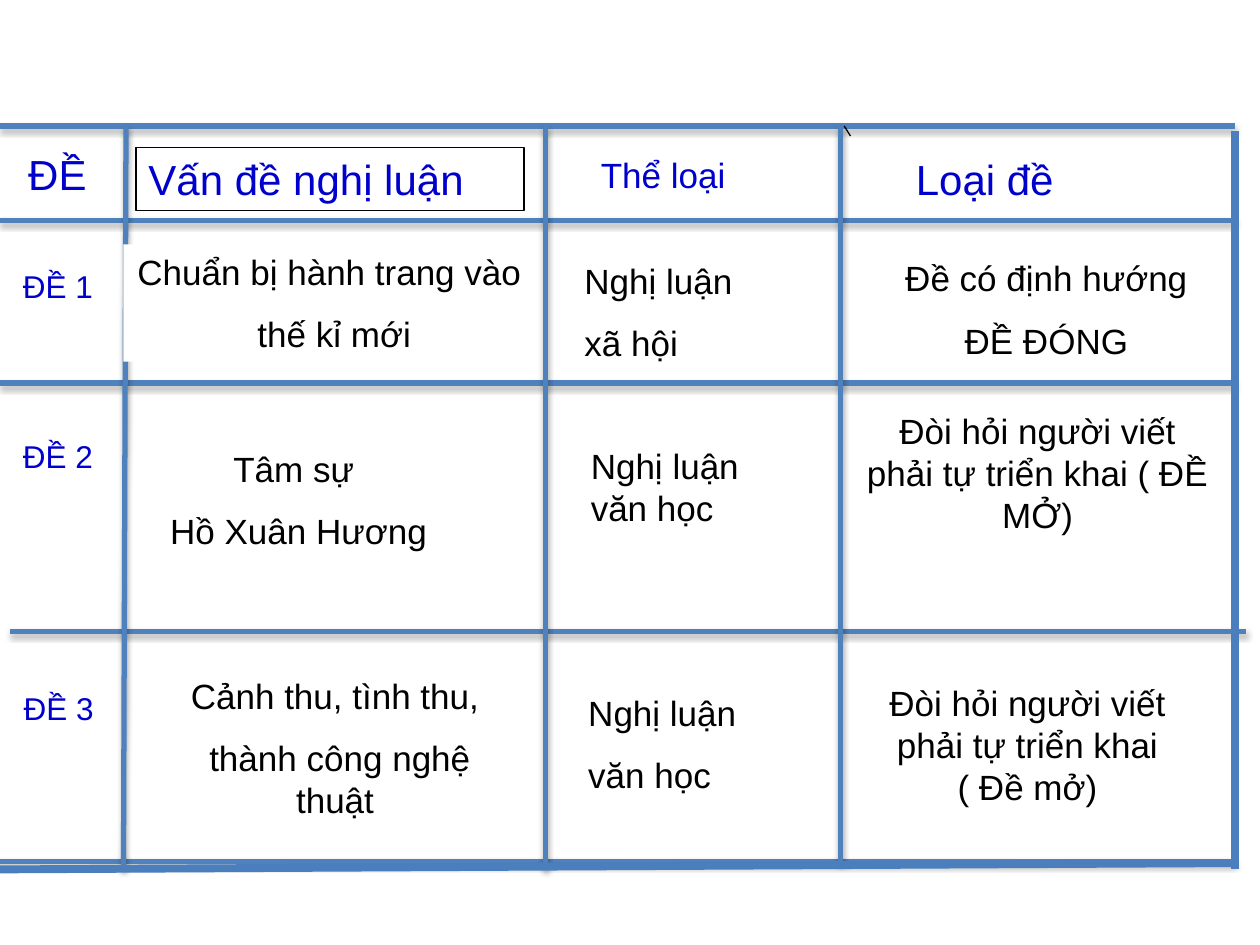
from lxml.etree import SubElement
from pptx import Presentation
from pptx.dml.color import RGBColor
from pptx.enum.shapes import MSO_CONNECTOR
from pptx.enum.text import MSO_ANCHOR, MSO_AUTO_SIZE, PP_ALIGN
from pptx.oxml.ns import qn
from pptx.util import Inches, Pt

WHITE = RGBColor(0xFF, 0xFF, 0xFF)
BLACK = RGBColor(0, 0, 0)
BLUE = RGBColor(0, 0, 0xCC)
GRID = RGBColor(0x4F, 0x81, 0xBD)
FRAME = RGBColor(0x4B, 0x7E, 0xBC)
LEFT, CENTER = PP_ALIGN.LEFT, PP_ALIGN.CENTER

GRID_LINES = [
    (0, 1, 9.8, 1),
    (0, 1.75, 9.8, 1.75),
    (0, 3.04, 9.8, 3.04),
    (0.08, 5.01, 9.89, 5.01),
    (-0.07, 6.84, 9.8, 6.84),
    (1, 1, 0.98, 6.9),
    (4.33, 1, 4.33, 6.9),
    (6.67, 1, 6.67, 6.85),
]
FRAME_LINES = [(0, 6.9, 9.8, 6.85), (9.8, 1.04, 9.8, 6.9)]

HEADERS = [
    ((0.08, 1.13, 0.75, 0.5), "ĐỀ", 24, CENTER, None),
    ((1.08, 1.17, 3.08, 0.5), "Vấn đề nghị luận", 24, LEFT, BLACK),
    ((4.67, 1.17, 1.25, 0.43), "Thể loại", 20, LEFT, None),
    ((7.17, 1.17, 2.25, 0.5), "Loại đề", 24, LEFT, None),
]
ROW_LABELS = [
    ((0, 2.07, 0.92, 0.4), "ĐỀ 1"),
    ((0, 3.42, 0.92, 0.4), "ĐỀ 2"),
    ((0.06, 5.42, 0.81, 0.4), "ĐỀ 3"),
]
TOPICS = [
    ((0.98, 1.94, 3.27, 0.93), ["Chuẩn bị hành trang vào", " thế kỉ mới"]),
    ((1.08, 3.5, 2.58, 0.94), ["Tâm sự ", "Hồ Xuân Hương"]),
    ((1.23, 5.3, 2.86, 1.28), ["Cảnh thu, tình thu,", " thành công nghệ thuật"]),
]
GENRES = [
    ((4.54, 2.01, 1.95, 0.94), ["Nghị luận", "xã hội"]),
    ((4.59, 3.48, 1.85, 0.77), ["Nghị luận văn học"]),
    ((4.57, 5.44, 1.92, 0.94), ["Nghị luận", "văn học"]),
]
TYPES = [
    ((6.97, 1.99, 2.67, 0.94), ["Đề có định hướng", "ĐỀ ĐÓNG"]),
    ((6.75, 3.2, 2.97, 1.11), ["Đòi hỏi người viết phải tự triển khai ( ĐỀ MỞ)"]),
    ((6.75, 5.36, 2.81, 1.11), ["Đòi hỏi người viết phải tự triển khai ( Đề mở)"]),
]


def add_line(s, ends, color, width, shadow=False):
    """Draw a straight line, with a soft shadow below it if asked."""
    line = s.shapes.add_connector(MSO_CONNECTOR.STRAIGHT, *map(Inches, ends))
    line.line.color.rgb = color
    line.line.width = Pt(width)
    effects = SubElement(line._element.spPr, qn("a:effectLst"))
    if shadow:
        outer = SubElement(effects, qn("a:outerShdw"), blurRad=str(Pt(3.1)),
                           dist=str(Pt(1.8)), dir="5400000", rotWithShape="0")
        black = SubElement(outer, qn("a:srgbClr"), val="000000")
        SubElement(black, qn("a:alpha"), val="35000")


def add_cell(s, box, lines, size=20, color=BLACK, align=CENTER, border=None):
    """Add a white text box with one paragraph for each line."""
    sp = s.shapes.add_textbox(*map(Inches, box))
    sp.fill.solid()
    sp.fill.fore_color.rgb = WHITE
    if border is not None:
        sp.line.color.rgb = border
        sp.line.width = Pt(0.75)
    tf = sp.text_frame
    tf.word_wrap = True
    tf.auto_size = MSO_AUTO_SIZE.SHAPE_TO_FIT_TEXT
    tf.vertical_anchor = MSO_ANCHOR.TOP
    for i, text in enumerate(lines):
        p = tf.add_paragraph() if i else tf.paragraphs[0]
        p.alignment = align
        if i:
            p.space_before = Pt(11.5)
        r = p.add_run()
        r.text = text
        r.font.name = "Arial"
        r.font.size = Pt(size)
        r.font.color.rgb = color


def main():
    """Build the comparison grid of the three essay topics."""
    prs = Presentation()
    prs.slide_width, prs.slide_height = Inches(10), Inches(7.5)
    s = prs.slides.add_slide(prs.slide_layouts[6])
    for ends in GRID_LINES:
        add_line(s, ends, GRID, 3, shadow=True)
    add_line(s, (6.75, 1.08, 6.7, 1), BLACK, 0.75)
    for box, text, size, align, border in HEADERS:
        add_cell(s, box, [text], size, BLUE, align, border)
    for box, text in ROW_LABELS:
        add_cell(s, box, [text], 18, BLUE)
    for column, align in ((TOPICS, CENTER), (GENRES, LEFT), (TYPES, CENTER)):
        for box, lines in column:
            add_cell(s, box, lines, align=align)
    for ends in FRAME_LINES:
        add_line(s, ends, FRAME, 4.5)
    prs.save("out.pptx")


if __name__ == "__main__":
    main()
